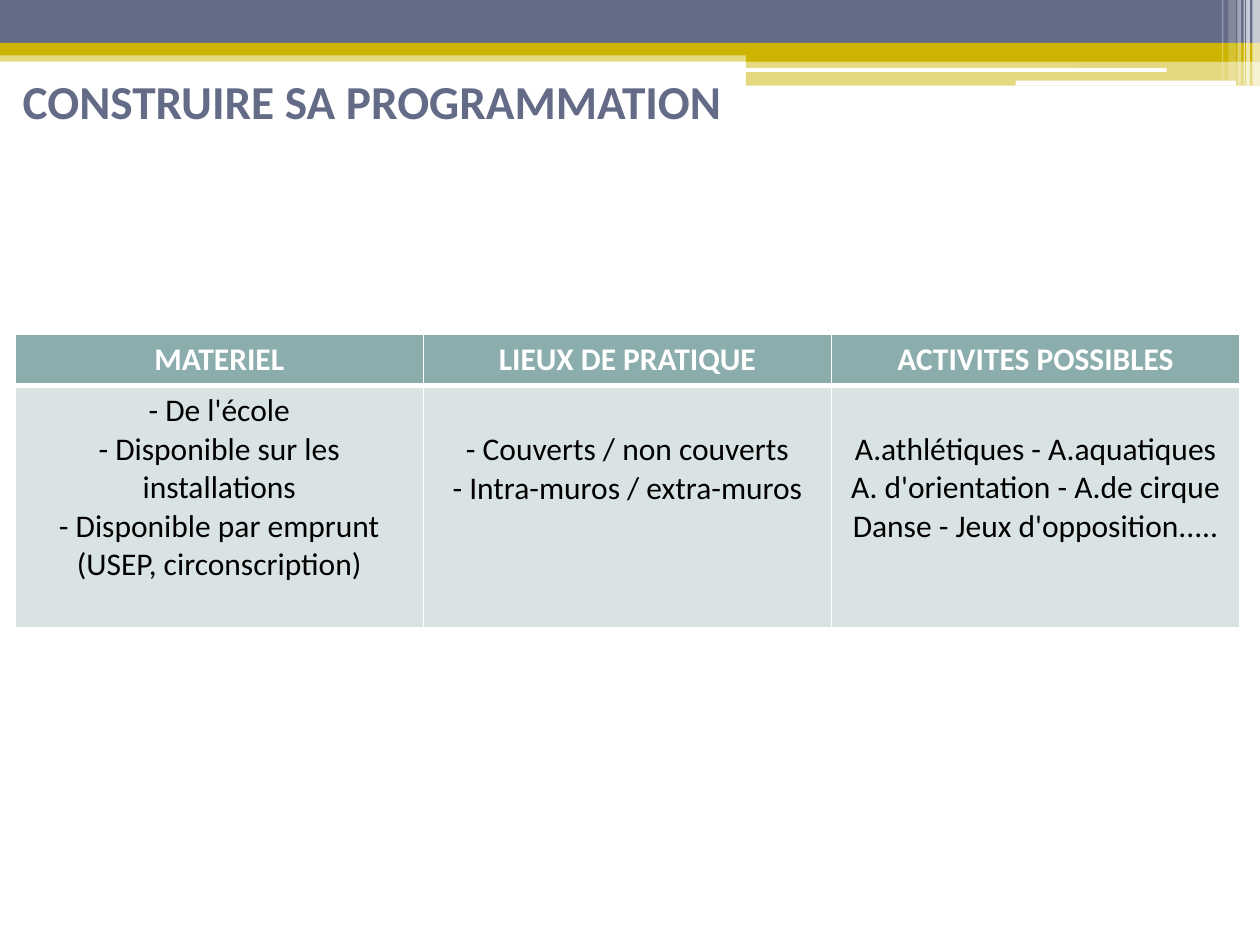
from dataclasses import dataclass

from lxml import etree
from pptx import Presentation
from pptx.dml.color import RGBColor
from pptx.enum.shapes import MSO_SHAPE
from pptx.enum.text import MSO_ANCHOR, MSO_AUTO_SIZE, PP_ALIGN
from pptx.oxml.ns import qn
from pptx.util import Inches, Pt

RECT, ROUNDED = MSO_SHAPE.RECTANGLE, MSO_SHAPE.ROUNDED_RECTANGLE
MIDDLE, NO_FIT = MSO_ANCHOR.MIDDLE, MSO_AUTO_SIZE.NONE
LEFT, CENTER = PP_ALIGN.LEFT, PP_ALIGN.CENTER
TITLE_ONLY = 5
COLUMNS, ROWS = 100, 75


@dataclass(frozen=True)
class Theme:
    font: str = "Calibri"
    slate: str = "646B86"
    gold: str = "CCB400"
    white: str = "FFFFFF"
    black: str = "000000"
    header: str = "8CADAE"
    body: str = "DAE3E3"
    title_size: float = 27
    table_size: float = 18
    thin: float = 1
    thick: float = 3


class SlideBuilder:
    def __init__(self, deck, theme):
        self.theme = theme
        self.slide = deck.slides.add_slide(deck.slide_layouts[TITLE_ONLY])
        self.column = deck.slide_width / COLUMNS
        self.row = deck.slide_height / ROWS

    def place(self, left, top, width, height):
        return (round(left * self.column), round(top * self.row),
                round(width * self.column), round(height * self.row))

    def add_text(self, paragraph, text, size, color, bold, align):
        paragraph.alignment = align
        run = paragraph.add_run()
        run.text = text
        run.font.name = self.theme.font
        run.font.size = Pt(size)
        run.font.bold = bold
        run.font.color.rgb = RGBColor.from_string(color)

    def band(self, area, color, opacity=100, kind=RECT):
        band = self.slide.shapes.add_shape(kind, *self.place(*area))
        band.shadow.inherit = False
        band.line.fill.background()
        band.fill.solid()
        band.fill.fore_color.rgb = RGBColor.from_string(color)
        if opacity < 100:
            tint = band._element.spPr.find(qn("a:solidFill"))[0]
            etree.SubElement(tint, qn("a:alpha"), val=str(opacity * 1000))

    def title(self, area, text):
        heading = self.slide.shapes.title
        heading.left, heading.top, heading.width, heading.height = self.place(*area)
        frame = heading.text_frame
        frame.word_wrap = True
        frame.auto_size = NO_FIT
        frame.vertical_anchor = MIDDLE
        self.add_text(frame.paragraphs[0], text, self.theme.title_size,
                      self.theme.slate, True, LEFT)
        self.slide.shapes._spTree.append(heading._element)

    def borders(self, cell, top, bottom):
        thin = self.theme.thin
        sides = {"lnL": thin, "lnR": thin, "lnT": top, "lnB": bottom}
        properties = cell._tc.get_or_add_tcPr()
        for position, (side, width) in enumerate(sides.items()):
            edge = etree.Element(qn(f"a:{side}"), w=str(Pt(width)))
            paint = etree.SubElement(edge, qn("a:solidFill"))
            etree.SubElement(paint, qn("a:srgbClr"), val=self.theme.white)
            properties.insert(position, edge)

    def cell(self, cell, lines, is_header, space_below):
        theme = self.theme
        cell.fill.solid()
        cell.fill.fore_color.rgb = RGBColor.from_string(
            theme.header if is_header else theme.body)
        cell.vertical_anchor = MIDDLE
        cell.margin_bottom = round(space_below * self.row)
        frame = cell.text_frame
        for number, line in enumerate(lines):
            paragraph = frame.add_paragraph() if number else frame.paragraphs[0]
            self.add_text(paragraph, line, theme.table_size,
                          theme.white if is_header else theme.black, is_header, CENTER)
        if is_header:
            self.borders(cell, theme.thin, theme.thick)
        else:
            self.borders(cell, theme.thick, theme.thin)

    def table(self, area, header_height, topics):
        table = self.slide.shapes.add_table(2, len(topics), *self.place(*area)).table
        table.rows[0].height = round(header_height * self.row)
        table.rows[1].height = round((area[3] - header_height) * self.row)
        for index, (heading, lines, space_below) in enumerate(topics):
            self.cell(table.cell(0, index), [heading], True, 0.5)
            self.cell(table.cell(1, index), lines, False, space_below)


BANDS = [
    ((0, 4, 100, 0.9), "gold", 50),
    ((0, 0, 100, 3.4), "slate", 100),
    ((0, 3.4, 100, 1), "gold", 100),
    ((59.2, 3.9, 40.8, 1), "gold", 100),
    ((59.2, 4.8, 40.8, 2), "gold", 50),
]
PILLS = [(59.1, 5.4, 33.5, 0.3), (80.6, 6.4, 17.5, 0.4)]
STRIPES = [
    (99.4, 0.6, 6.8, 65),
    (98.9, 0.3, 6.8, 65),
    (98.7, 0.1, 6.8, 60),
    (98.2, 0.3, 6.8, 40),
    (97.5, 0.6, 6.4, 20),
    (97, 0.1, 6.4, 30),
]
TOPICS = [
    ("MATERIEL",
     ["- De l'école", "- Disponible sur les installations",
      "- Disponible par emprunt (USEP, circonscription)"], 3.5),
    ("LIEUX DE PRATIQUE",
     ["- Couverts / non couverts", "- Intra-muros / extra-muros"], 6.5),
    ("ACTIVITES POSSIBLES",
     ["A.athlétiques - A.aquatiques", "A. d'orientation - A.de cirque",
      "Danse - Jeux d'opposition....."], 3.5),
]


def main():
    deck = Presentation()
    deck.slide_width, deck.slide_height = Inches(10), Inches(7.5)
    theme = Theme()
    builder = SlideBuilder(deck, theme)
    for area, color, opacity in BANDS:
        builder.band(area, getattr(theme, color), opacity)
    for area in PILLS:
        builder.band(area, theme.white, kind=ROUNDED)
    for left, width, height, opacity in STRIPES:
        builder.band((left, 0, width, height), theme.white, opacity)
    builder.title((0.8, 2.1, 59.4, 11.7), "CONSTRUIRE SA PROGRAMMATION")
    builder.table((1.2, 26.5, 97.2, 23.3), 4.1, TOPICS)
    deck.save("out.pptx")


if __name__ == "__main__":
    main()
